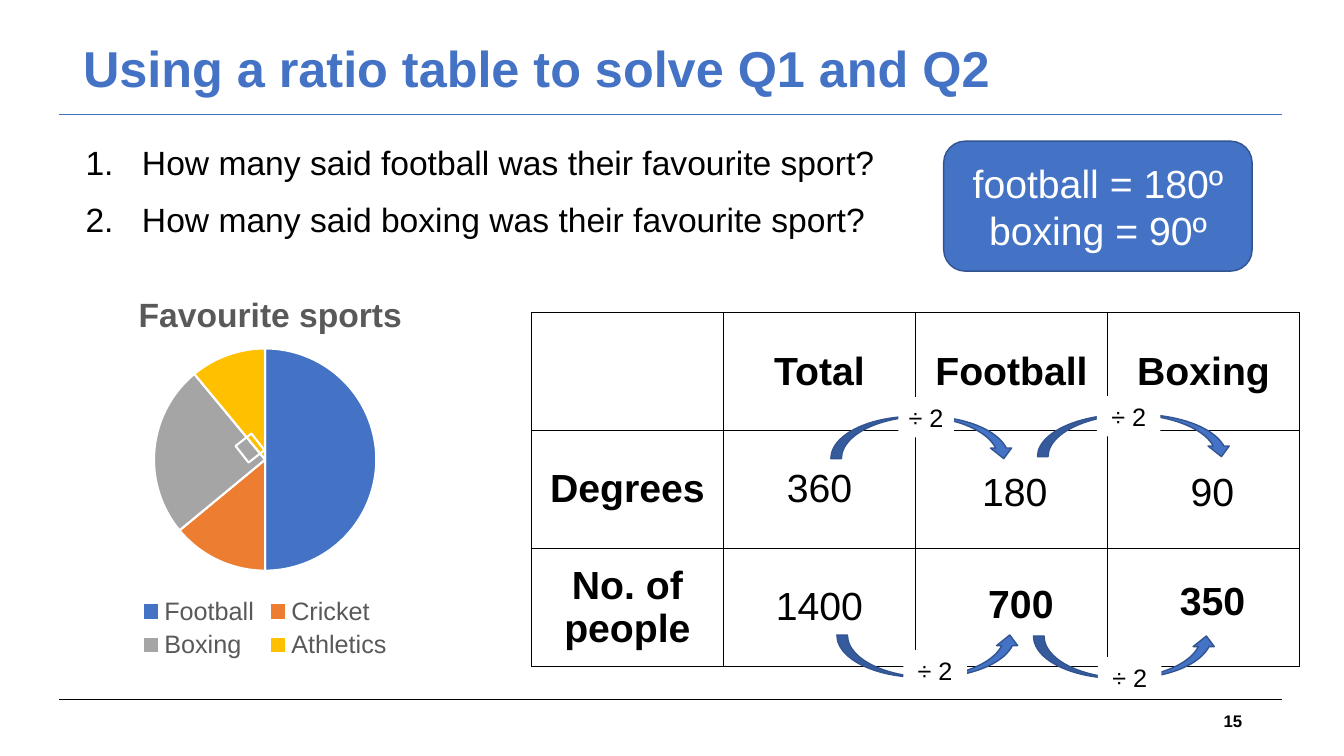
from lxml import etree
from pptx import Presentation
from pptx import util as u
from pptx.chart.data import CategoryChartData
from pptx.dml.color import RGBColor
from pptx.enum import chart as charts, shapes, text
from pptx.oxml import parse_xml
from pptx.oxml.ns import nsdecls, qn

BLUE, DARK_BLUE, BLACK, WHITE, GREY = "4472C4", "325491", "000000", "FFFFFF", "595959"
CENTER = text.PP_ALIGN.CENTER
MIDDLE = text.MSO_ANCHOR.MIDDLE


def colour(value):
    return RGBColor.from_string(value)


def inches(*values):
    return [u.Inches(value) for value in values]


def style_font(font, size, value=BLACK, bold=False):
    font.name = "Arial"
    font.size = u.Pt(size)
    font.bold = bold
    font.color.rgb = colour(value)


def write(frame, lines, size, value=BLACK, bold=False, align=CENTER,
          anchor=text.MSO_ANCHOR.TOP):
    frame.word_wrap = True
    frame.vertical_anchor = anchor
    for index, line in enumerate(lines):
        paragraph = frame.paragraphs[0] if index == 0 else frame.add_paragraph()
        paragraph.alignment = align
        run = paragraph.add_run()
        run.text = line
        style_font(run.font, size, value, bold)


def add_text(slide, place, lines, size, **style):
    box = slide.shapes.add_textbox(*inches(*place))
    write(box.text_frame, lines, size, **style)
    return box


def add_rule(slide, y, value):
    rule = slide.shapes.add_connector(
        shapes.MSO_CONNECTOR.STRAIGHT, *inches(0.59, y, 12.72, y))
    rule.line.color.rgb = colour(value)
    rule.line.width = u.Pt(0.75)
    etree.SubElement(rule.element.spPr, qn("a:effectLst"))


def add_shape(slide, kind, place, fill=None, line=None, width=1):
    shape = slide.shapes.add_shape(kind, *inches(*place))
    shape.shadow.inherit = False
    if fill:
        shape.fill.solid()
        shape.fill.fore_color.rgb = colour(fill)
    else:
        shape.fill.background()
    if line:
        shape.line.color.rgb = colour(line)
        shape.line.width = u.Pt(width)
    else:
        shape.line.fill.background()
    return shape


def add_halving(slide, arrow_place, label_place, below=False):
    arrow = add_shape(slide, shapes.MSO_SHAPE.CURVED_DOWN_ARROW,
                      arrow_place, BLUE, DARK_BLUE)
    if below:
        arrow.element.spPr.find(qn("a:xfrm")).set("flipV", "1")
    label = add_shape(slide, shapes.MSO_SHAPE.RECTANGLE, label_place, WHITE)
    write(label.text_frame, ["÷ 2"], 18)


def add_borders(cell):
    properties = cell._tc.get_or_add_tcPr()
    for index, side in enumerate(("lnL", "lnR", "lnT", "lnB")):
        properties.insert(index, parse_xml(
            f'<a:{side} {nsdecls("a")} w="12700"><a:solidFill>'
            f'<a:srgbClr val="{BLACK}"/></a:solidFill></a:{side}>'))


def add_ratio_table(slide):
    rows = [["", "Total", "Football", "Boxing"],
            ["Degrees", "360", "", ""],
            ["No. of people", "1400", "", ""]]
    table = slide.shapes.add_table(3, 4, *inches(5.27, 3.1, 7.62, 3.51)).table
    table.first_row = table.horz_banding = False
    for row, labels in enumerate(rows):
        for column, label in enumerate(labels):
            cell = table.cell(row, column)
            cell.fill.background()
            cell.vertical_anchor = MIDDLE
            if label:
                write(cell.text_frame, [label], 28, bold=row == 0 or column == 0,
                      anchor=MIDDLE)
            add_borders(cell)


def set_layout(element, position, before, inner=False):
    for old in element.findall(qn("c:layout")):
        element.remove(old)
    target = '<c:layoutTarget val="inner"/>' if inner else ""
    modes = "".join(f'<c:{axis}Mode val="edge"/>' for axis in "xy")
    values = "".join(f'<c:{name} val="{value}"/>' for name, value in zip("xywh", position))
    layout = parse_xml(f'<c:layout {nsdecls("c")}><c:manualLayout>{target}{modes}'
                       f'{values}</c:manualLayout></c:layout>')
    element.find(qn(before)).addprevious(layout)


def add_sports_chart(slide):
    data = CategoryChartData()
    data.categories = ["Football", "Cricket", "Boxing", "Athletics"]
    data.add_series("Series 1", [50, 14, 25, 11])
    chart = slide.shapes.add_chart(
        charts.XL_CHART_TYPE.PIE, *inches(0.51, 2.61, 4.24, 3.98), data).chart
    style_font(chart.font, 18, GREY)
    chart.has_title = True
    run = chart.chart_title.text_frame.paragraphs[0].add_run()
    run.text = "Favourite sports"
    style_font(run.font, 24, GREY, True)
    chart.has_legend = True
    chart.legend.position = charts.XL_LEGEND_POSITION.BOTTOM
    chart.legend.include_in_layout = False
    style_font(chart.legend.font, 18, GREY)
    plot = chart.plots[0]
    plot.vary_by_categories = True
    for index, value in enumerate((BLUE, "ED7D31", "A5A5A5", "FFC000")):
        slice_format = plot.series[0].points[index].format
        slice_format.fill.solid()
        slice_format.fill.fore_color.rgb = colour(value)
        slice_format.line.color.rgb = colour(WHITE)
        slice_format.line.width = u.Pt(1.5)
    title = chart.chart_title._element
    set_layout(title, (0.19, 0.06), "c:overlay")
    plot_area = title.getparent().find(qn("c:plotArea"))
    set_layout(plot_area, (0.24, 0.21, 0.52, 0.56), "c:pieChart", inner=True)


def add_questions(slide):
    box = add_text(slide, (0.75, 1.36, 8.11, 1.55),
                   ["How many said football was their favourite sport?",
                    "How many said boxing was their favourite sport?"],
                   24, align=text.PP_ALIGN.LEFT)
    for paragraph in box.text_frame.paragraphs:
        paragraph.space_after = u.Pt(12)
        properties = paragraph._p.get_or_add_pPr()
        properties.set("marL", str(u.Inches(0.56)))
        properties.set("indent", str(-u.Inches(0.56)))
        number = etree.SubElement(properties, qn("a:buAutoNum"))
        number.set("type", "arabicPeriod")


def main():
    presentation = Presentation()
    presentation.slide_width, presentation.slide_height = inches(13.33, 7.5)
    slide = presentation.slides.add_slide(presentation.slide_layouts[6])
    add_rule(slide, 6.94, BLACK)
    add_rule(slide, 1.14, BLUE)
    add_text(slide, (9.42, 6.95, 3, 0.4), ["15"], 12, bold=True,
             align=text.PP_ALIGN.RIGHT, anchor=MIDDLE)
    title = add_text(slide, (0.36, 0.29, 9.93, 0.83),
                     ["Using a ratio table to solve Q1 and Q2"], 36,
                     value=BLUE, bold=True, anchor=MIDDLE)
    title.text_frame.paragraphs[0].line_spacing = 0.9
    add_ratio_table(slide)
    add_halving(slide, (8.24, 4.13, 1.82, 0.42), (8.91, 3.94, 0.55, 0.4))
    add_halving(slide, (8.3, 6.3, 1.82, 0.42), (8.96, 6.45, 0.63, 0.4), below=True)
    for answer, left, top, bold in (("180", 9.36, 4.59, False), ("700", 9.42, 5.7, True),
                                    ("350", 11.32, 5.67, True), ("90", 11.32, 4.59, False)):
        add_text(slide, (left, top, 1.41, 0.57), [answer], 28, bold=bold)
    angles = add_shape(slide, shapes.MSO_SHAPE.ROUNDED_RECTANGLE,
                       (9.36, 1.4, 3.06, 1.29), BLUE, DARK_BLUE)
    write(angles.text_frame, ["football = 180º", "boxing = 90º"], 28, WHITE, anchor=MIDDLE)
    add_halving(slide, (10.25, 6.31, 1.82, 0.42), (10.89, 6.52, 0.63, 0.4), below=True)
    add_halving(slide, (10.29, 4.11, 1.93, 0.42), (10.88, 3.93, 0.63, 0.4))
    add_sports_chart(slide)
    right_angle = add_shape(slide, shapes.MSO_SHAPE.RECTANGLE,
                            (2.38, 4.34, 0.2, 0.21), line=WHITE, width=1.5)
    right_angle.rotation = 322
    add_questions(slide)
    presentation.save("out.pptx")


if __name__ == "__main__":
    main()
